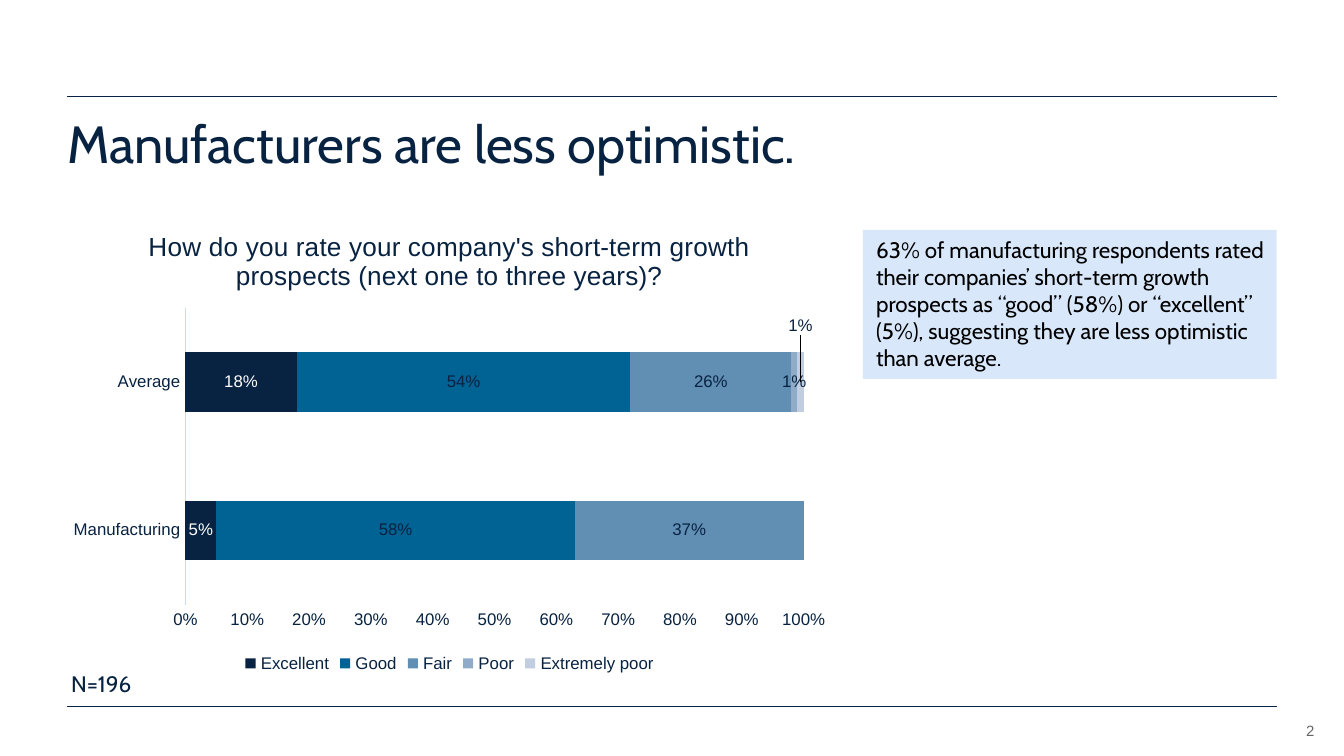
from lxml import etree
from pptx import Presentation
from pptx.chart.data import CategoryChartData
from pptx.dml.color import RGBColor
from pptx.enum import chart as ch, shapes, text
from pptx.oxml import parse_xml
from pptx.oxml.ns import nsdecls, qn
from pptx.util import Inches, Pt

NAVY = RGBColor(0x08, 0x22, 0x41)
BLUE = RGBColor(0x00, 0x63, 0x93)
STEEL = RGBColor(0x61, 0x8E, 0xB3)
MIST = RGBColor(0x8F, 0xAB, 0xC8)
HAZE = RGBColor(0xC1, 0xCE, 0xDF)
PALE = RGBColor(0xD8, 0xE8, 0xFA)
AXIS = RGBColor(0xC5, 0xDC, 0xF8)
GREY = RGBColor(0x66, 0x66, 0x66)
BLACK = RGBColor(0, 0, 0)
WHITE = RGBColor(255, 255, 255)

PERCENT = "0%;;"  # zero values stay unlabelled
RATINGS = [  # name, (Manufacturing, Average), fill, label colour
    ("Excellent", (0.05, 0.18), NAVY, WHITE),
    ("Good", (0.58, 0.54), BLUE, NAVY),
    ("Fair", (0.37, 0.26), STEEL, NAVY),
    ("Poor", (0, 0.01), MIST, NAVY),
    ("Extremely poor", (0, 0.01), HAZE, NAVY),
]
NO_LEADER_LINES = (
    f'<c:extLst {nsdecls("c")}><c:ext uri="{{CE6537A1-D6FC-4f65-9D91-7224C49458BB}}" '
    'xmlns:c15="http://schemas.microsoft.com/office/drawing/2012/chart">'
    '<c15:showLeaderLines val="0"/></c:ext></c:extLst>')


def set_font(font, size, color, name="Arial"):
    font.size, font.name, font.bold = Pt(size), name, False
    font.color.rgb = color


def write(shape, words, size, color, name="Cabin", inset=True):
    frame = shape.text_frame
    frame.word_wrap = True
    frame.vertical_anchor = text.MSO_ANCHOR.TOP
    if not inset:
        frame.margin_left = frame.margin_right = 0
        frame.margin_top = frame.margin_bottom = 0
    paragraph = frame.paragraphs[0]
    paragraph.text = words
    paragraph.alignment = text.PP_ALIGN.LEFT
    set_font(paragraph.font, size, color, name)
    return paragraph


def add_text(slide, box, *args, **kwargs):
    textbox = slide.shapes.add_textbox(*map(Inches, box))
    return textbox, write(textbox, *args, **kwargs)


def add_frame(slide, left, top, width, height):
    """Rules above and below the content, and the page number."""
    for y in (top, top + height):
        rule = slide.shapes.add_connector(
            shapes.MSO_CONNECTOR.STRAIGHT,
            Inches(left), Inches(y), Inches(left + width), Inches(y))
        rule.line.color.rgb = NAVY
        rule.line.width = Pt(0.5)
        etree.SubElement(rule._element.spPr, qn("a:effectLst"))
    number, paragraph = add_text(
        slide, (left + width - 0.19, top + height + 0.06, 0.47, 0.18),
        "2", 8, GREY, "Arial", inset=False)
    number.text_frame.vertical_anchor = text.MSO_ANCHOR.BOTTOM
    paragraph.alignment = text.PP_ALIGN.RIGHT


def manual_layout(**settings):
    children = "".join(f'<c:{tag} val="{val}"/>' for tag, val in settings.items())
    return parse_xml(f'<c:layout {nsdecls("c")}><c:manualLayout>{children}'
                     '</c:manualLayout></c:layout>')


def style_axes(chart):
    for axis in (chart.category_axis, chart.value_axis):
        axis.major_tick_mark = axis.minor_tick_mark = ch.XL_TICK_MARK.NONE
        axis.has_major_gridlines = False
        set_font(axis.tick_labels.font, 9, NAVY)
    chart.category_axis.format.line.color.rgb = AXIS
    chart.category_axis.format.line.width = Pt(0.75)
    values = chart.value_axis
    values.format.line.fill.background()
    values.minimum_scale, values.maximum_scale, values.major_unit = 0, 1, 0.1
    values.tick_labels.number_format = "0%"
    values.tick_labels.number_format_is_linked = False


def style_series(series, fill, label_color):
    series.format.fill.solid()
    series.format.fill.fore_color.rgb = fill
    labels = series.data_labels
    labels.show_value = True
    labels.number_format = PERCENT
    labels.number_format_is_linked = False
    labels.position = ch.XL_LABEL_POSITION.CENTER
    set_font(labels.font, 9, label_color)


def lift_label(series, point, offset):
    """Move one label clear of its narrow bar segment."""
    label = series.points[point].data_label
    set_font(label.font, 9, NAVY)
    label.position = ch.XL_LABEL_POSITION.CENTER
    labels = series.data_labels._element
    entry = labels.find(qn("c:dLbl"))
    entry.insert(1, manual_layout(x=0, y=offset))
    entry.insert(2, parse_xml(
        f'<c:numFmt {nsdecls("c")} formatCode="{PERCENT}" sourceLinked="0"/>'))
    labels.append(parse_xml(NO_LEADER_LINES))


def add_ratings_chart(slide, left, top, width, height):
    data = CategoryChartData(number_format="0%")
    data.categories = ["Manufacturing", "Average"]
    for name, shares, *_ in RATINGS:
        data.add_series(name, shares)
    chart = slide.shapes.add_chart(
        ch.XL_CHART_TYPE.BAR_STACKED_100,
        *map(Inches, (left, top, width, height)), data).chart
    set_font(chart.font, 10, NAVY)

    # Title and legend
    chart.has_title = True
    title = chart.chart_title.text_frame.paragraphs[0]
    title.text = ("How do you rate your company's short-term growth "
                  "prospects (next one to three years)?")
    set_font(title.font, 14, NAVY)
    chart.chart_title.include_in_layout = False
    chart.has_legend = True
    chart.legend.position = ch.XL_LEGEND_POSITION.BOTTOM
    chart.legend.include_in_layout = False
    set_font(chart.legend.font, 9, NAVY)

    # Plot area and bars
    style_axes(chart)
    plot = chart.plots[0]
    plot.gap_width, plot.overlap, plot.vary_by_categories = 150, 100, False
    for series, (_, _, fill, label_color) in zip(plot.series, RATINGS):
        style_series(series, fill, label_color)
    lift_label(plot.series[-1], 1, -0.12)
    area = plot._element.getparent()
    for layout in area.findall(qn("c:layout")):
        area.remove(layout)
    area.insert(0, manual_layout(
        layoutTarget="inner", xMode="edge", yMode="edge",
        x=0.95 / width, y=0.74 / height, w=4.6 / width, h=2.21 / height))


def add_takeaway(slide, left, top, width, height):
    panel = slide.shapes.add_shape(
        shapes.MSO_SHAPE.RECTANGLE, *map(Inches, (left, top, width, height)))
    panel.shadow.inherit = False
    panel.fill.solid()
    panel.fill.fore_color.rgb = PALE
    panel.line.fill.background()
    write(panel, "63% of manufacturing respondents rated their companies’ "
          "short-term growth prospects as “good” (58%) or “excellent” (5%), "
          "suggesting they are less optimistic than average.", 12, BLACK)
    panel.text_frame.margin_right = Inches(0.08)


def main():
    deck = Presentation()
    deck.slide_width = Inches(10)
    deck.slide_height = deck.slide_width * 9 // 16
    slide = deck.slides.add_slide(deck.slide_layouts[6])
    add_frame(slide, 0.5, 0.72, 9, 4.54)
    _, headline = add_text(slide, (0.5, 0.88, 9, 0.55),
                           "Manufacturers are less optimistic.", 28, NAVY, inset=False)
    headline.line_spacing = 0.9
    add_takeaway(slide, 6.42, 1.71, 3.08, 1.11)
    add_text(slide, (0.43, 4.94, 1.81, 0.3), "N=196", 12, NAVY)
    add_ratings_chart(slide, 0.43, 1.55, 5.83, 3.5)
    deck.save("out.pptx")


if __name__ == "__main__":
    main()
